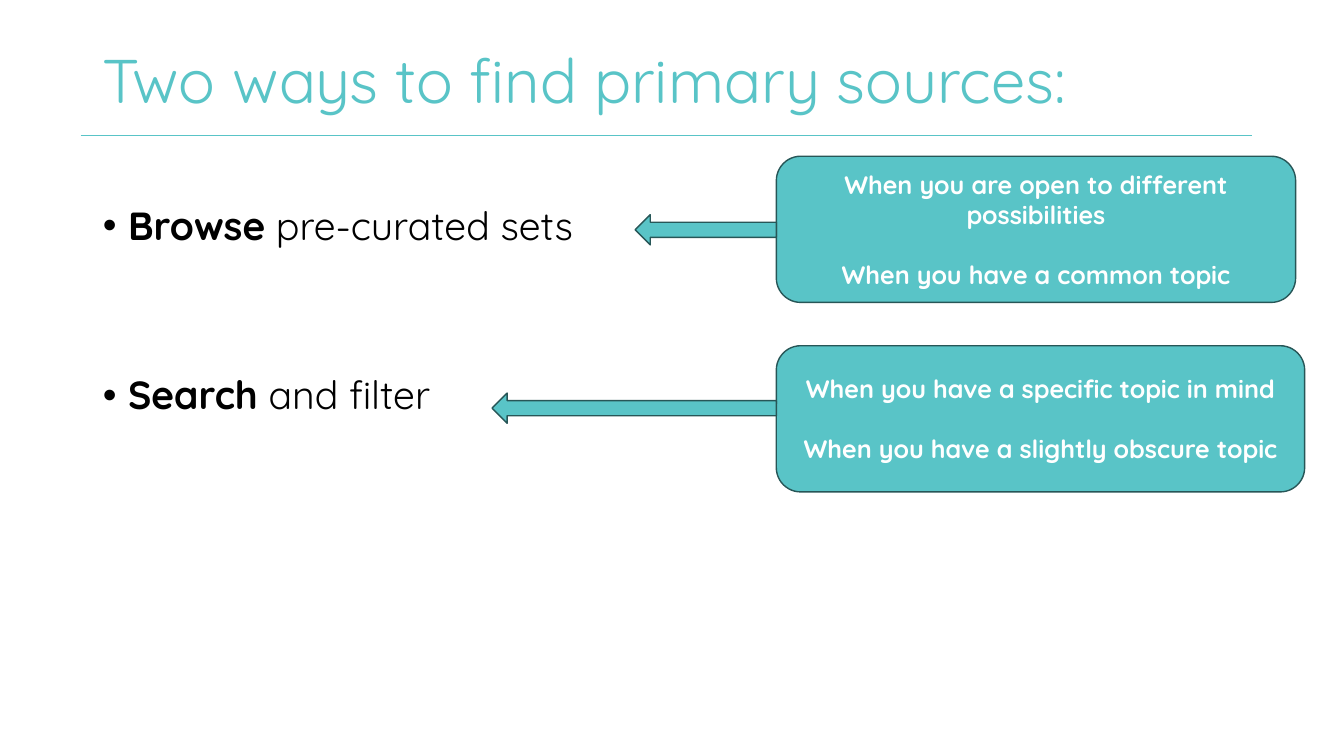
from dataclasses import dataclass

from lxml.etree import SubElement
from pptx import Presentation
from pptx.dml.color import RGBColor
from pptx.enum.shapes import MSO_CONNECTOR, MSO_SHAPE
from pptx.enum.text import MSO_ANCHOR, MSO_AUTO_SIZE, PP_ALIGN
from pptx.oxml.ns import qn
from pptx.util import Inches, Pt


@dataclass(frozen=True)
class Theme:
    font: str = "Quicksand"
    teal: RGBColor = RGBColor(0x59, 0xC4, 0xC7)
    outline: RGBColor = RGBColor(0x27, 0x56, 0x57)
    black: RGBColor = RGBColor(0, 0, 0)
    white: RGBColor = RGBColor(255, 255, 255)
    title_size: Pt = Pt(44)
    body_size: Pt = Pt(28)
    box_size: Pt = Pt(18)


theme = Theme()


def style_span(span, size, color, bold=False):
    span.font.name = theme.font
    span.font.size = size
    span.font.color.rgb = color
    span.font.bold = bold


def add_teal_shape(kind, left, top, width, height):
    shape = slide.shapes.add_shape(
        kind, Inches(left), Inches(top), Inches(width), Inches(height))
    shape.shadow.inherit = False
    shape.fill.solid()
    shape.fill.fore_color.rgb = theme.teal
    shape.line.color.rgb = theme.outline
    shape.line.width = Pt(1)
    return shape


deck = Presentation()
deck.slide_width, deck.slide_height = Inches(13.33), Inches(7.5)
slide = deck.slides.add_slide(deck.slide_layouts[1])
title, body = slide.placeholders

rule = slide.shapes.add_connector(
    MSO_CONNECTOR.STRAIGHT, Inches(0.8), Inches(1.34), Inches(12.42), Inches(1.34))
rule.line.color.rgb = theme.teal
rule.line.width = Pt(0.5)
SubElement(rule._element.spPr, qn("a:effectLst"))

for placeholder, top, height, anchor in [
    (title, 0.1, 1.45, MSO_ANCHOR.MIDDLE),
    (body, 2, 4.76, MSO_ANCHOR.TOP),
]:
    placeholder.left, placeholder.top = Inches(0.92), Inches(top)
    placeholder.width, placeholder.height = Inches(11.5), Inches(height)
    placeholder.text_frame.vertical_anchor = anchor
    placeholder.text_frame.auto_size = MSO_AUTO_SIZE.NONE
    placeholder.text_frame.word_wrap = True

title.text_frame.text = "Two ways to find primary sources:"
heading = title.text_frame.paragraphs[0]
heading.alignment = PP_ALIGN.LEFT
heading.line_spacing = 0.9
style_span(heading.runs[0], theme.title_size, theme.teal)

# Each way: bold word, rest of bullet, space before, box top, box width,
# arrow left, arrow top, reasons
ways = [
    ("Browse", " pre-curated sets", 10, 1.55, 5.15, 6.3, 2.13,
     ["When you are open to different possibilities",
      "When you have a common topic"]),
    ("Search", " and filter", 90.5, 3.43, 5.24, 4.88, 3.9,
     ["When you have a specific topic in mind",
      "When you have a slightly obscure topic"]),
]
box_left = 7.7

body.text_frame.text = "\n".join(way[0] for way in ways)
for para, way in zip(body.text_frame.paragraphs, ways):
    verb, rest, space, box_top, box_width, arrow_left, arrow_top, reasons = way
    para.line_spacing = 0.9
    para.space_before = Pt(space)
    properties = para._p.get_or_add_pPr()
    properties.set("marL", str(Inches(0.25)))
    properties.set("indent", str(Inches(-0.25)))
    SubElement(properties, qn("a:buFont"), typeface="Arial")
    SubElement(properties, qn("a:buChar"), char="•")
    style_span(para.runs[0], theme.body_size, theme.black, bold=True)
    rest_span = para.add_run()
    rest_span.text = rest
    style_span(rest_span, theme.body_size, theme.black)

    box = add_teal_shape(
        MSO_SHAPE.ROUNDED_RECTANGLE, box_left, box_top, box_width, 1.45)
    frame = box.text_frame
    frame.word_wrap = True
    frame.vertical_anchor = MSO_ANCHOR.MIDDLE
    frame.text = "\n".join(reasons)
    for reason in frame.paragraphs:
        reason.alignment = PP_ALIGN.CENTER
        style_span(reason.runs[0], theme.box_size, theme.white, bold=True)
    frame.paragraphs[1].space_before = Pt(21.4)

    add_teal_shape(
        MSO_SHAPE.LEFT_ARROW, arrow_left, arrow_top, box_left - arrow_left, 0.3)

deck.save("out.pptx")
